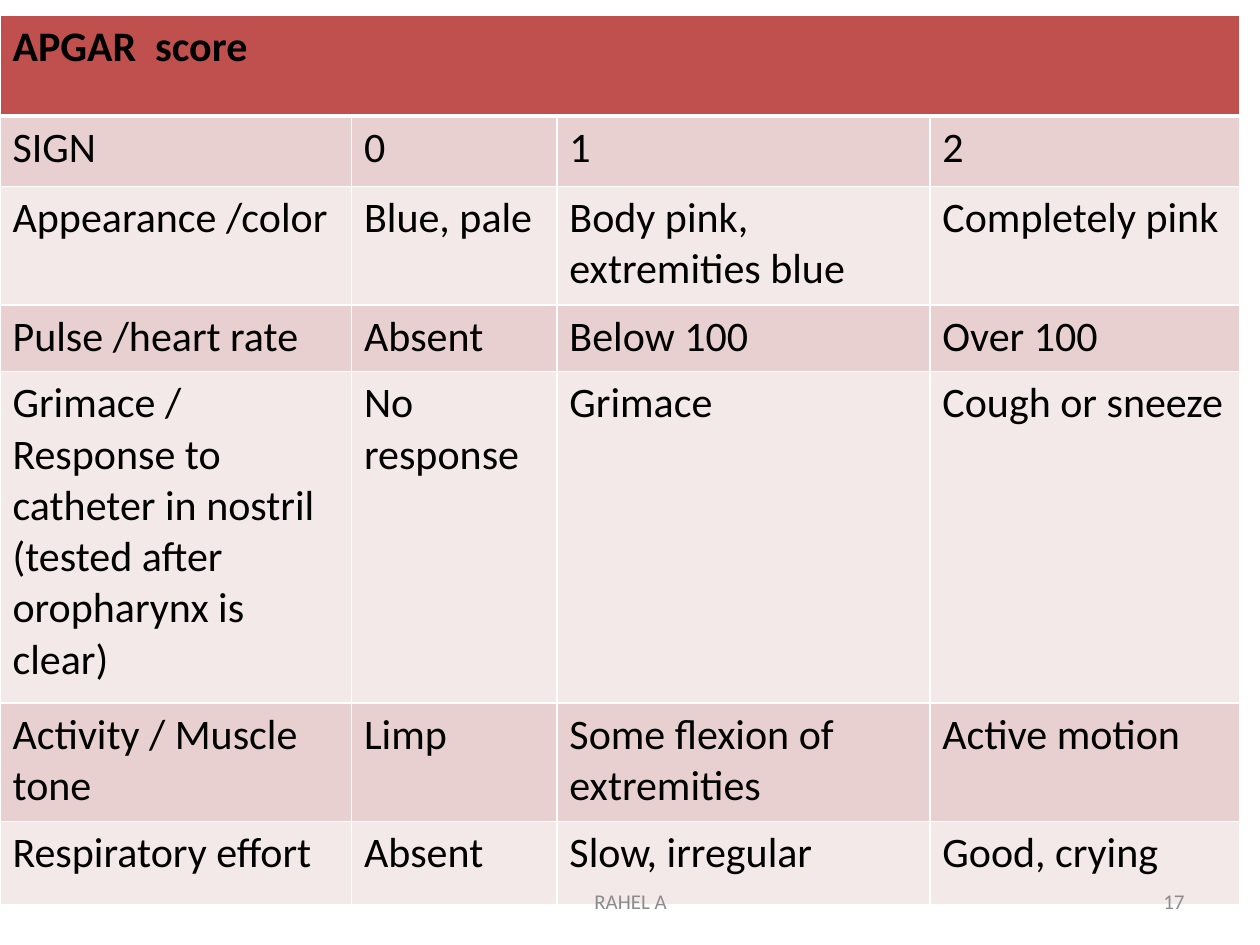
from lxml.etree import SubElement
from pptx import Presentation
from pptx.dml.color import RGBColor
from pptx.enum.text import MSO_ANCHOR as Anchor, PP_ALIGN as Align
from pptx.oxml.ns import qn
from pptx.util import Inches, Pt

COLORS = {
    "header": "C0504D",
    "dark_band": "E8D0D0",
    "light_band": "F4E9E9",
    "border": "FFFFFF",
    "text": "000000",
    "footer": "8C8C8C",
}
COL_WIDTHS = [2.79, 1.63, 2.96, 2.46]
ROW_HEIGHTS = [0.8, 0.56, 0.94, 0.53, 2.63, 0.94, 0.66]
TITLE = "APGAR  score"
SCORES = [
    ["SIGN", "0", "1", "2"],
    ["Appearance /color", "Blue, pale", "Body pink, extremities blue", "Completely pink"],
    ["Pulse /heart rate", "Absent", "Below 100", "Over 100"],
    ["Grimace / Response to catheter in nostril (tested after oropharynx is clear)",
     "No response", "Grimace", "Cough or sneeze"],
    ["Activity / Muscle tone", "Limp", "Some flexion of extremities", "Active motion"],
    ["Respiratory effort", "Absent", "Slow, irregular", "Good, crying"],
]


def rgb(name):
    return RGBColor.from_string(COLORS[name])


def write(tf, text, size=24, color="text", bold=False, align=Align.LEFT):
    p = tf.paragraphs[0]
    p.alignment = align
    r = p.add_run()
    r.text = text
    r.font.name = "Calibri"
    r.font.size = Pt(size)
    r.font.bold = bold
    r.font.color.rgb = rgb(color)


def set_borders(cell, top=1, bottom=1):
    tc_pr = cell._tc.get_or_add_tcPr()
    for side, width in (("L", 1), ("R", 1), ("T", top), ("B", bottom)):
        ln = SubElement(tc_pr, qn(f"a:ln{side}"), w=str(Pt(width)))
        fill = SubElement(ln, qn("a:solidFill"))
        SubElement(fill, qn("a:srgbClr"), val=COLORS["border"])


def style_cell(cell, fill, **borders):
    set_borders(cell, **borders)
    cell.fill.solid()
    cell.fill.fore_color.rgb = rgb(fill)


def add_score_table(s):
    frame = s.shapes.add_table(
        len(ROW_HEIGHTS), len(COL_WIDTHS), Inches(0), Inches(0.12),
        Inches(sum(COL_WIDTHS)), Inches(sum(ROW_HEIGHTS)))
    table = frame.table
    for col, width in zip(table.columns, COL_WIDTHS):
        col.width = Inches(width)
    for row, height in zip(table.rows, ROW_HEIGHTS):
        row.height = Inches(height)

    for cell in table.rows[0].cells:
        style_cell(cell, "header", bottom=3)
    title = table.cell(0, 0)
    title.merge(table.cell(0, len(COL_WIDTHS) - 1))
    write(title.text_frame, TITLE, bold=True)

    for i, texts in enumerate(SCORES, start=1):
        band = "dark_band" if i % 2 else "light_band"
        for j, text in enumerate(texts):
            cell = table.cell(i, j)
            style_cell(cell, band, top=3 if i == 1 else 1)
            write(cell.text_frame, text)


def add_footer(s, text, left, width, align):
    sp = s.shapes.add_textbox(Inches(left), Inches(6.95), Inches(width), Inches(0.4))
    tf = sp.text_frame
    tf.word_wrap = True
    tf.vertical_anchor = Anchor.MIDDLE
    write(tf, text, size=12, color="footer", align=align)


def main():
    prs = Presentation()
    prs.slide_width, prs.slide_height = Inches(10), Inches(7.5)
    s = prs.slides.add_slide(prs.slide_layouts[6])
    add_score_table(s)
    add_footer(s, "17", 7.17, 2.33, Align.RIGHT)
    add_footer(s, "RAHEL A", 3.42, 3.17, Align.CENTER)
    prs.save("out.pptx")


if __name__ == "__main__":
    main()
